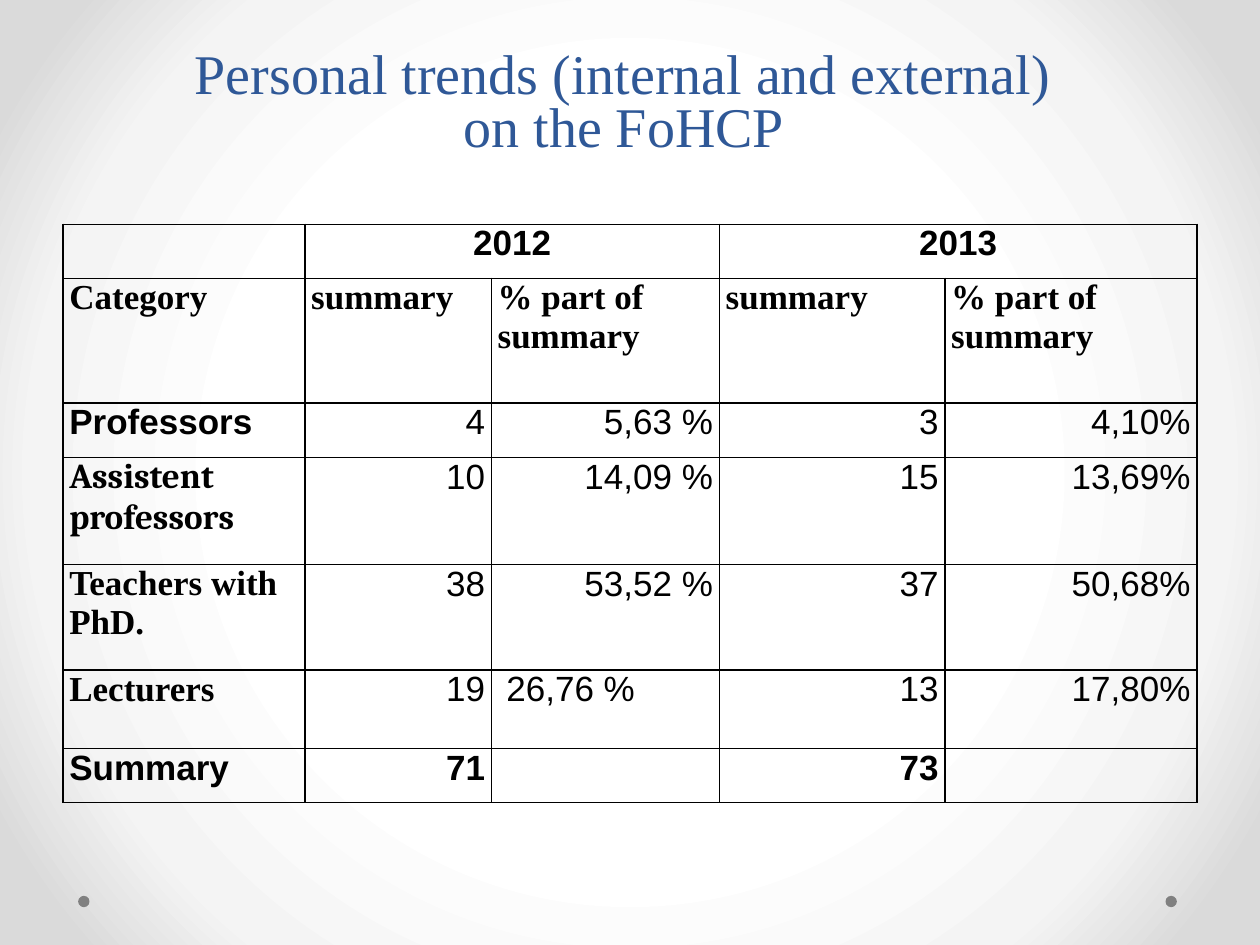
from lxml import etree
from pptx import Presentation
from pptx.dml.color import RGBColor
from pptx.enum.shapes import MSO_SHAPE
from pptx.enum.text import MSO_ANCHOR, PP_ALIGN
from pptx.oxml import parse_xml
from pptx.oxml.ns import qn
from pptx.util import Inches, Pt

LEFT, MID, RIGHT = PP_ALIGN.LEFT, PP_ALIGN.CENTER, PP_ALIGN.RIGHT
BOTTOM = MSO_ANCHOR.BOTTOM
OVAL = MSO_SHAPE.OVAL
SANS, SERIF, BOOK = "Arial", "Times New Roman", "Cambria"
DRAW = "http://schemas.openxmlformats.org/drawingml/2006/main"


def color(code):
    return RGBColor.from_string(code)


def line_xml(parent, tag, code, width):
    line = etree.SubElement(parent, qn(tag), w=str(Pt(width)))
    fill = etree.SubElement(line, qn("a:solidFill"))
    etree.SubElement(fill, qn("a:srgbClr"), val=code)


class Deck:
    """Holds the style and the current slide."""
    ink, blue, gray = "000000", "2F5897", "808080"
    sides = ("a:lnL", "a:lnR", "a:lnT", "a:lnB")
    pads = dict(margin_left=Inches(0.05), margin_right=Inches(0.05),
                margin_top=0, margin_bottom=0)

    def __init__(self, show):
        self.slide = show.slides.add_slide(show.slide_layouts[5])

    def back(self, stops):
        """Fill the background with a round gradient."""
        self.slide.background.fill.solid()
        flat = self.slide.element.xpath(".//p:bgPr/a:solidFill")[0]
        marks = "".join(
            f'<a:gs pos="{pos * 1000}"><a:srgbClr val="{code}"/></a:gs>'
            for pos, code in stops)
        grad = parse_xml(
            f'<a:gradFill xmlns:a="{DRAW}" rotWithShape="1">'
            f'<a:gsLst>{marks}</a:gsLst><a:path path="circle">'
            '<a:fillToRect l="50000" t="50000" r="50000" b="50000"/>'
            '</a:path></a:gradFill>')
        flat.getparent().replace(flat, grad)

    def style(self, para, align, code, **form):
        para.alignment = align
        for run in para.runs:
            for name, value in form.items():
                setattr(run.font, name, value)
            run.font.color.rgb = color(code)

    def dot(self, x, y, size):
        dot = self.slide.shapes.add_shape(
            OVAL, Inches(x), Inches(y), Inches(size), Inches(size))
        dot.shadow.inherit = False
        dot.fill.solid()
        dot.fill.fore_color.rgb = color(self.gray)
        dot.line.fill.background()

    def title(self, text, x, y, w, h):
        title = self.slide.shapes.title
        place = dict(left=x, top=y, width=w, height=h)
        for name, value in place.items():
            setattr(title, name, Inches(value))
        frame = title.text_frame
        frame.text = text
        frame.vertical_anchor = BOTTOM
        para = frame.paragraphs[0]
        para.line_spacing = 0.8
        self.style(para, MID, self.blue, size=Pt(32), name=SERIF)

    def table(self, x, y, cols, rows):
        grid = self.slide.shapes.add_table(
            len(rows), len(cols), Inches(x), Inches(y),
            Inches(sum(cols)), Inches(sum(rows))).table
        grid.first_row = grid.horz_banding = False
        for col, width in zip(grid.columns, cols):
            col.width = Inches(width)
        for row, height in zip(grid.rows, rows):
            row.height = Inches(height)
        for cell in grid.iter_cells():
            for name, value in self.pads.items():
                setattr(cell, name, value)
            props = cell._tc.get_or_add_tcPr()
            for side in self.sides:
                line_xml(props, side, self.ink, 1)
            cell.fill.background()
        return grid

    def cell(self, cell, text, align, font, bold):
        if text:
            cell.text = text
            self.style(cell.text_frame.paragraphs[0], align, self.ink,
                       size=Pt(20), name=font, bold=bold)


def main():
    show = Presentation()
    show.slide_width, show.slide_height = Inches(10), Inches(7.5)
    deck = Deck(show)
    deck.back([(50, "FFFFFF"), (76, "F4F4F4"), (92, "DADADA")])
    for x in (9.25, 0.62):
        deck.dot(x, 7.11, 0.09)
    deck.title("Personal trends (internal and external) \von the FoHCP ",
               0.5, 0.13, 9, 1.18)

    grid = deck.table(0.5, 1.78, [1.92, 1.48, 1.81, 1.79, 2],
                      [0.43, 0.99, 0.43, 0.85, 0.84, 0.62, 0.43])
    for col, year in ((1, "2012"), (3, "2013")):
        grid.cell(0, col).merge(grid.cell(0, col + 1))
        deck.cell(grid.cell(0, col), year, MID, SANS, True)

    heads = ["Category"] + ["summary", "% part of summary"] * 2
    for col, head in enumerate(heads):
        deck.cell(grid.cell(1, col), head, LEFT, SERIF, True)

    staff = [
        ("Professors", SANS, "4", "5,63 %", "3", "4,10%"),
        ("Assistent professors", BOOK, "10", "14,09 %", "15", "13,69%"),
        ("Teachers with PhD.", SERIF, "38", "53,52 %", "37", "50,68%"),
        ("Lecturers", SERIF, "19", "26,76 %", "13", "17,80%"),
        ("Summary", SANS, "71", "", "73", ""),
    ]
    for row, (label, font, *values) in enumerate(staff, 2):
        deck.cell(grid.cell(row, 0), label, LEFT, font, True)
        for col, value in enumerate(values, 1):
            deck.cell(grid.cell(row, col), value, RIGHT, SANS,
                      label == "Summary")
    grid.cell(5, 2).margin_right = Inches(0.67)

    show.save("out.pptx")


if __name__ == "__main__":
    main()
